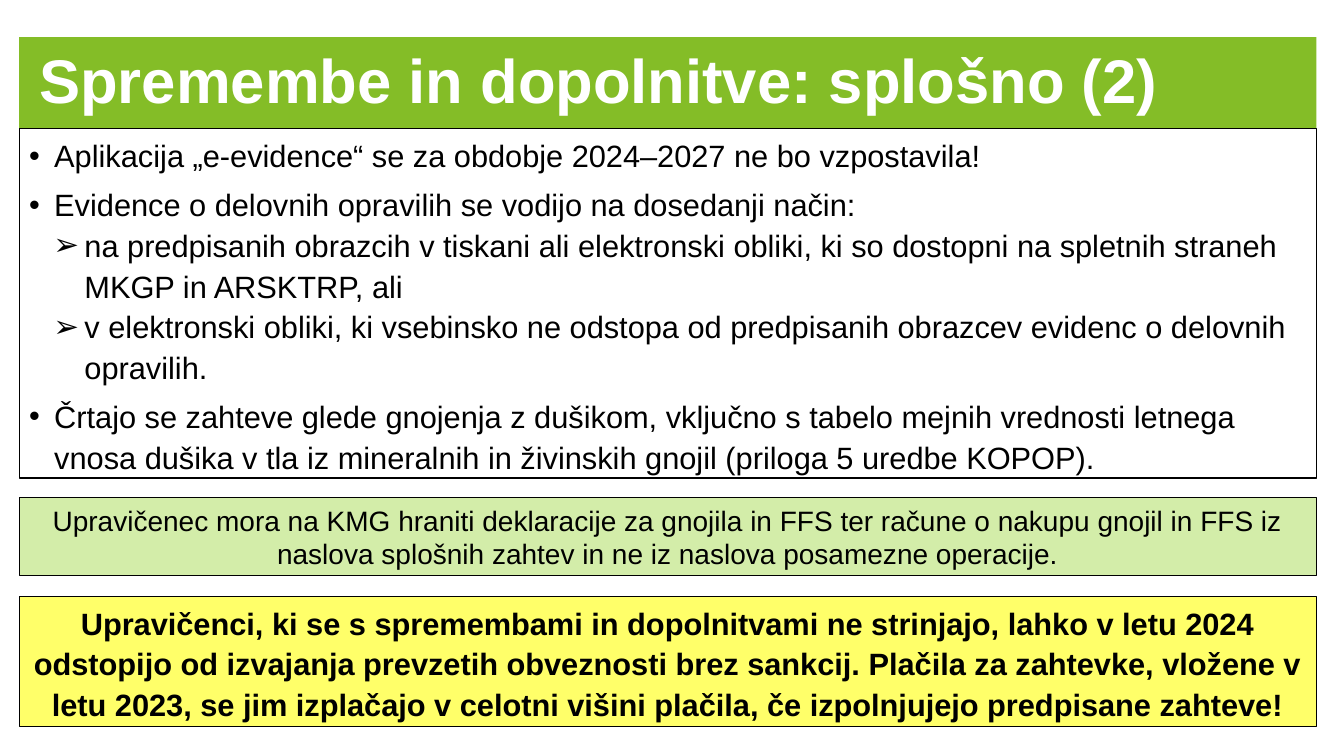
from dataclasses import dataclass

from lxml.etree import SubElement
from pptx import Presentation
from pptx.dml.color import RGBColor
from pptx.enum.shapes import MSO_SHAPE
from pptx.enum.text import MSO_ANCHOR as Anchor, MSO_AUTO_SIZE as AutoSize, PP_ALIGN as Align
from pptx.oxml.ns import qn
from pptx.util import Pt


@dataclass(frozen=True)
class Theme:
    font: str = "Arial"
    text: RGBColor = RGBColor.from_string("000000")
    white: RGBColor = RGBColor.from_string("FFFFFF")
    title_fill: RGBColor = RGBColor.from_string("84BD27")
    note_fill: RGBColor = RGBColor.from_string("D3EDA9")
    warning_fill: RGBColor = RGBColor.from_string("FFFF69")
    title_size: float = 44
    body_size: float = 22
    note_size: float = 20
    border: float = 0.75


@dataclass(frozen=True)
class Level:
    bullet: str
    indent: float
    hanging: float


@dataclass(frozen=True)
class Item:
    text: str
    level: Level
    space_after: float = 0


@dataclass(frozen=True)
class Panel:
    top: float
    height: float
    fill: RGBColor | None
    anchor: Anchor = Anchor.MIDDLE


@dataclass(frozen=True)
class Callout:
    panel: Panel
    text: str
    size: float
    bold: bool
    line_spacing: float


THEME = Theme()
LEFT, WIDTH = 13.7, 926.6
MAIN = Level("•", 18, 18)
SUB = Level("➢", 39.6, 22.3)

TITLE_TOP, TITLE_HEIGHT = 26.6, 65.5
BODY = Panel(91.7, 249.8, None, Anchor.TOP)
ITEMS = [
    Item("Aplikacija „e-evidence“ se za obdobje 2024–2027 ne bo vzpostavila!", MAIN, 6),
    Item("Evidence o delovnih opravilih se vodijo na dosedanji način:", MAIN),
    Item("na predpisanih obrazcih v tiskani ali elektronski obliki, ki so dostopni "
         "na spletnih straneh MKGP in ARSKTRP, ali", SUB),
    Item("v elektronski obliki, ki vsebinsko ne odstopa od predpisanih obrazcev "
         "evidenc o delovnih opravilih.", SUB, 6),
    Item("Črtajo se zahteve glede gnojenja z dušikom, vključno s tabelo mejnih vrednosti "
         "letnega vnosa dušika v tla iz mineralnih in živinskih gnojil "
         "(priloga 5 uredbe KOPOP).", MAIN, 6),
]
CALLOUTS = [
    Callout(Panel(355.7, 55.4, THEME.note_fill),
            "Upravičenec mora na KMG hraniti deklaracije za gnojila in FFS ter račune "
            "o nakupu gnojil in FFS iz naslova splošnih zahtev in ne iz naslova "
            "posamezne operacije.", THEME.note_size, False, 1.0),
    Callout(Panel(426.2, 92.9, THEME.warning_fill),
            "Upravičenci, ki se s spremembami in dopolnitvami ne strinjajo, lahko v letu "
            "2024 odstopijo od izvajanja prevzetih obveznosti brez sankcij. Plačila za "
            "zahtevke, vložene v letu 2023, se jim izplačajo v celotni višini plačila, "
            "če izpolnjujejo predpisane zahteve!", THEME.body_size, True, 1.1),
]


def style(paragraph, size: float, color: RGBColor, bold: bool = False,
          align: Align = Align.LEFT, line_spacing: float = 1.1) -> None:
    paragraph.alignment = align
    paragraph.line_spacing = line_spacing
    font = paragraph.font
    font.name, font.size, font.bold = THEME.font, Pt(size), bold
    font.color.rgb = color


def add_bullet(paragraph, level: Level) -> None:
    properties = paragraph._p.get_or_add_pPr()
    properties.set("marL", str(Pt(level.indent)))
    properties.set("indent", str(-Pt(level.hanging)))
    SubElement(properties, qn("a:buFont"), typeface=THEME.font)
    SubElement(properties, qn("a:buChar"), char=level.bullet)


def add_panel(slide, panel: Panel):
    shape = slide.shapes.add_shape(MSO_SHAPE.RECTANGLE, Pt(LEFT), Pt(panel.top),
                                   Pt(WIDTH), Pt(panel.height))
    shape.shadow.inherit = False
    if panel.fill is None:
        shape.fill.background()
    else:
        shape.fill.solid()
        shape.fill.fore_color.rgb = panel.fill
    shape.line.color.rgb = THEME.text
    shape.line.width = Pt(THEME.border)
    shape.text_frame.word_wrap = True
    shape.text_frame.vertical_anchor = panel.anchor
    return shape


def add_title(slide, text: str) -> None:
    title = slide.shapes.title
    title.left, title.top = Pt(LEFT), Pt(TITLE_TOP)
    title.width, title.height = Pt(WIDTH), Pt(TITLE_HEIGHT)
    title.fill.solid()
    title.fill.fore_color.rgb = THEME.title_fill
    frame = title.text_frame
    frame.text = text
    frame.auto_size = AutoSize.NONE
    frame.vertical_anchor = Anchor.MIDDLE
    frame.margin_left = Pt(14.4)
    style(frame.paragraphs[0], THEME.title_size, THEME.white, bold=True, line_spacing=0.9)


def add_list(slide, panel: Panel, items: list[Item]) -> None:
    frame = add_panel(slide, panel).text_frame
    for index, item in enumerate(items):
        paragraph = frame.add_paragraph() if index else frame.paragraphs[0]
        paragraph.text = item.text
        add_bullet(paragraph, item.level)
        paragraph.space_after = Pt(item.space_after)
        style(paragraph, THEME.body_size, THEME.text)


def add_callout(slide, callout: Callout) -> None:
    paragraph = add_panel(slide, callout.panel).text_frame.paragraphs[0]
    paragraph.text = callout.text
    style(paragraph, callout.size, THEME.text, callout.bold, Align.CENTER,
          callout.line_spacing)


def main() -> None:
    presentation = Presentation()
    presentation.slide_width, presentation.slide_height = Pt(960), Pt(540)
    slide = presentation.slides.add_slide(presentation.slide_layouts[5])

    # Title band
    add_title(slide, "Spremembe in dopolnitve: splošno (2)")
    # Main list of changes
    add_list(slide, BODY, ITEMS)
    # Highlighted notes
    for callout in CALLOUTS:
        add_callout(slide, callout)

    presentation.save("out.pptx")


if __name__ == "__main__":
    main()
